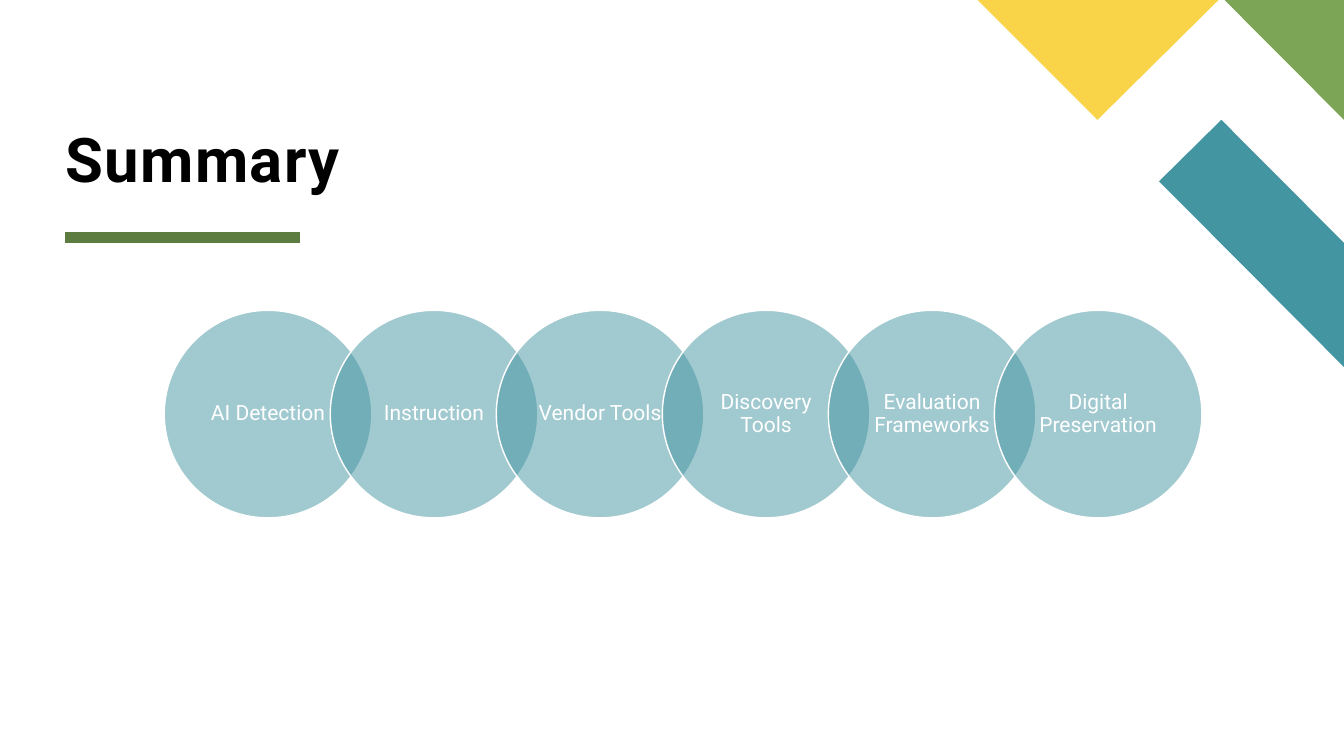
"""Build the Summary slide: a row of overlapping topic circles with corner decoration."""
from dataclasses import dataclass

from lxml import etree
from pptx import Presentation
from pptx import util as u
from pptx.dml.color import RGBColor
from pptx.enum import shapes, text
from pptx.oxml.ns import qn

FONT = "Roboto"
TEAL = "4495A2"
WHITE = "FFFFFF"
DIAMETER = 5.23
PITCH = 0.8 * DIAMETER
ROW_LEFT, ROW_TOP = 4.14, 7.82
TITLE_LEFT = 1.65


@dataclass
class Decoration:
    """A coloured polygon with corners in centimetres."""
    color: str
    corners: list[tuple[float, float]]


DECORATIONS = [
    Decoration(TEAL, [(33.87, 9.25), (33.87, 6.12), (30.78, 3.02), (29.21, 4.57)]),
    Decoration("7CA655", [(33.87, 3.02), (33.87, 0), (30.86, 0)]),
    Decoration("F9D448", [(24.64, 0), (27.66, 3.02), (30.71, 0)]),
]
TOPICS = ["AI Detection", "Instruction", "Vendor Tools", "Discovery Tools",
          "Evaluation Frameworks", "Digital Preservation"]


def rgb(color: str) -> RGBColor:
    """Turn a hex string into a colour."""
    return RGBColor.from_string(color)


def set_font(paragraph, size: float, color: str, bold: bool = False) -> None:
    """Format a whole paragraph."""
    paragraph.font.name = FONT
    paragraph.font.size = u.Pt(size)
    paragraph.font.bold = bold
    paragraph.font.color.rgb = rgb(color)


def set_margins(frame, horizontal: float, vertical: float) -> None:
    """Set the inner margins of a text frame in centimetres."""
    frame.margin_left = frame.margin_right = u.Cm(horizontal)
    frame.margin_top = frame.margin_bottom = u.Cm(vertical)


def draw_decoration(slide, decoration: Decoration) -> None:
    """Draw one borderless polygon."""
    start, *others = [(u.Cm(x), u.Cm(y)) for x, y in decoration.corners]
    builder = slide.shapes.build_freeform(*start)
    builder.add_line_segments(others, close=True)
    shape = builder.convert_to_shape()
    shape.shadow.inherit = False
    shape.fill.solid()
    shape.fill.fore_color.rgb = rgb(decoration.color)
    shape.line.fill.background()


def draw_title(slide, title: str) -> None:
    """Place the title and the thick rule under it."""
    shape = slide.shapes.title
    shape.left, shape.top = u.Cm(TITLE_LEFT), u.Cm(0.76)
    shape.width, shape.height = u.Cm(27.15), u.Cm(4.14)
    frame = shape.text_frame
    frame.text = title
    frame.auto_size = text.MSO_AUTO_SIZE.NONE
    frame.vertical_anchor = text.MSO_ANCHOR.BOTTOM
    set_margins(frame, 0, 0)
    paragraph = frame.paragraphs[0]
    paragraph.alignment = text.PP_ALIGN.LEFT
    paragraph.line_spacing = 0.8
    set_font(paragraph, 44, "000000", bold=True)
    paragraph.font._element.set("spc", "100")

    rule = slide.shapes.add_connector(
        shapes.MSO_CONNECTOR.STRAIGHT,
        u.Cm(TITLE_LEFT), u.Cm(5.98), u.Cm(7.57), u.Cm(5.98))
    rule.line.color.rgb = rgb("5D7D40")
    rule.line.width = u.Pt(8)
    etree.SubElement(rule._element.spPr, qn("a:effectLst"))


def draw_topic(slide, index: int, topic: str) -> None:
    """Draw one half-transparent circle with its topic."""
    circle = slide.shapes.add_shape(
        shapes.MSO_SHAPE.OVAL, u.Cm(ROW_LEFT + index * PITCH), u.Cm(ROW_TOP),
        u.Cm(DIAMETER), u.Cm(DIAMETER))
    circle.shadow.inherit = False
    circle.fill.solid()
    circle.fill.fore_color.rgb = rgb(TEAL)
    fill_color = circle._element.spPr.find(qn("a:solidFill")).find(qn("a:srgbClr"))
    etree.SubElement(fill_color, qn("a:alpha"), val="50000")
    circle.line.color.rgb = rgb(WHITE)
    circle.line.width = u.Pt(1)
    frame = circle.text_frame
    frame.text = topic
    frame.word_wrap = True
    frame.vertical_anchor = text.MSO_ANCHOR.MIDDLE
    set_margins(frame, 0.28, 0.05)
    paragraph = frame.paragraphs[0]
    paragraph.alignment = text.PP_ALIGN.CENTER
    paragraph.line_spacing = 0.9
    set_font(paragraph, 15, WHITE)


def main() -> None:
    """Assemble and save the slide."""
    presentation = Presentation()
    presentation.slide_width = u.Cm(33.87)
    presentation.slide_height = u.Cm(19.05)
    slide = presentation.slides.add_slide(presentation.slide_layouts[5])
    for decoration in DECORATIONS:
        draw_decoration(slide, decoration)
    draw_title(slide, "Summary")
    for index, topic in enumerate(TOPICS):
        draw_topic(slide, index, topic)
    presentation.save("out.pptx")


if __name__ == "__main__":
    main()
